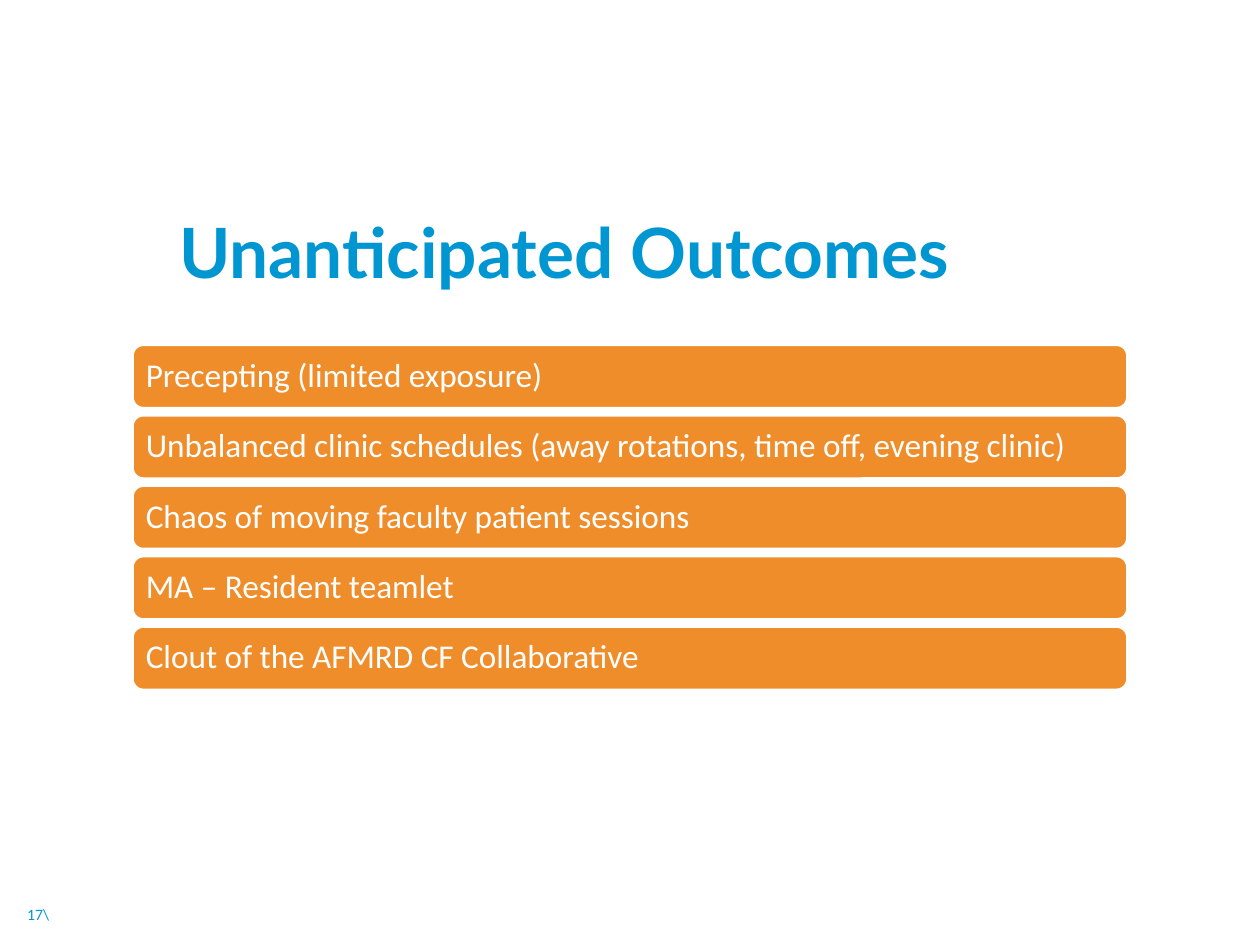
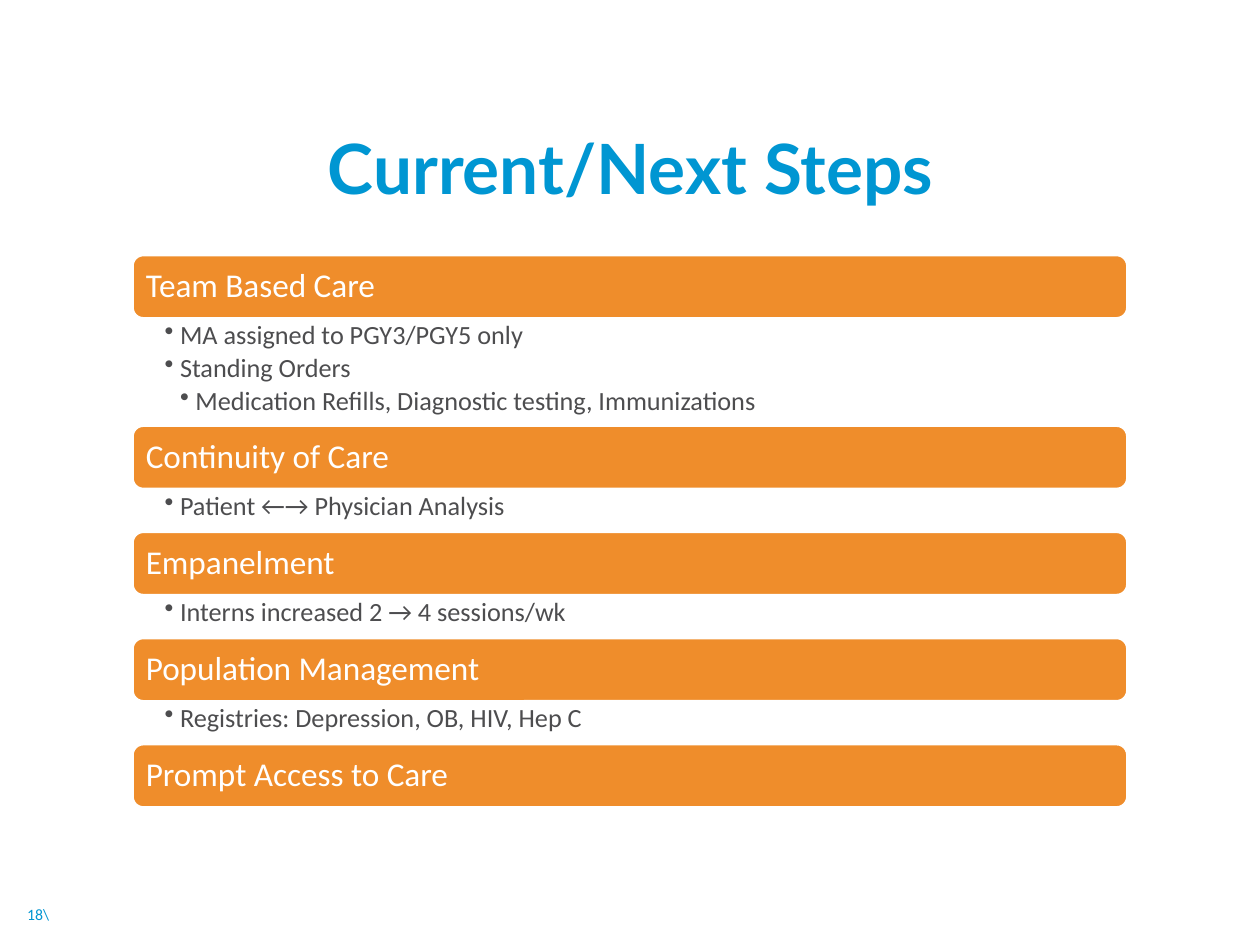
from lxml import etree
from pptx import Presentation
from pptx.dml.color import RGBColor
from pptx.enum.shapes import MSO_SHAPE
from pptx.enum.text import MSO_ANCHOR, PP_ALIGN
from pptx.oxml.ns import qn
from pptx.util import Cm, Pt

ROUNDED = MSO_SHAPE.ROUNDED_RECTANGLE
TOP, MIDDLE = MSO_ANCHOR.TOP, MSO_ANCHOR.MIDDLE
LEFT, CENTER, RIGHT = PP_ALIGN.LEFT, PP_ALIGN.CENTER, PP_ALIGN.RIGHT

BLUE = RGBColor(0x00, 0x96, 0xD2)
ORANGE = RGBColor(0xEF, 0x8D, 0x2B)
GREY = RGBColor(0x4D, 0x4D, 0x4F)
WHITE = RGBColor(0xFF, 0xFF, 0xFF)

# Text formats shared by both slides
TITLE_FONT = {"name": "Lato", "size": Pt(39.6), "bold": True}
NUMBER_FONT = {"name": "Calibri", "size": Pt(9)}
BAR_FONT = {"name": "Calibri", "size": Pt(19)}
DETAIL_FONT = {"name": "Calibri", "size": Pt(15)}
TIGHT = {"line_spacing": 0.9}
DETAIL_SPACING = {"line_spacing": 0.9, "space_after": Pt(2.7)}
BAR_MARGINS = dict.fromkeys(
    ("margin_left", "margin_right", "margin_top", "margin_bottom"), Cm(0.2))
DETAIL_MARGINS = {"margin_left": Cm(0.64), "margin_right": Cm(0.38),
                  "margin_top": Cm(0.08), "margin_bottom": Cm(0.08)}

# Geometry of the bar list, in centimetres
BAR_LEFT, BAR_WIDTH, BAR_HEIGHT = 2.68, 20.04, 1.26
DETAIL_LINE, DETAIL_PADDING = 0.65, 0.23
INDENT = 0.31


def apply_format(target, values):
    for name, value in values.items():
        setattr(target, name, value)


class Deck:
    """Holds the shared style and the slide being built."""

    def __init__(self):
        self.presentation = Presentation()
        self.presentation.slide_width = Cm(25.4)
        self.presentation.slide_height = Cm(19.05)
        self.slide = None

    def add_text(self, paragraph, text, font, color, spacing, alignment=LEFT):
        apply_format(paragraph, {"alignment": alignment, **spacing})
        run = paragraph.add_run()
        run.text = text
        apply_format(run.font, font)
        run.font.color.rgb = color

    def text_box(self, left, top, width, height, anchor, margins):
        box = self.slide.shapes.add_textbox(
            Cm(left), Cm(top), Cm(width), Cm(height))
        apply_format(box.text_frame,
                     {"word_wrap": True, "vertical_anchor": anchor, **margins})
        return box.text_frame

    def new_slide(self, number, title, title_left, title_top):
        layout = self.presentation.slide_layouts[6]
        self.slide = self.presentation.slides.add_slide(layout)
        frame = self.text_box(0, 18.06, 1.24, 0.76, MIDDLE, {})
        self.add_text(frame.paragraphs[0], f"{number}\\", NUMBER_FONT, BLUE, {}, RIGHT)
        frame = self.text_box(title_left, title_top, 18.26, 1.47, MIDDLE, {})
        self.add_text(frame.paragraphs[0], title, TITLE_FONT, BLUE, TIGHT, CENTER)

    def bar(self, top, text):
        shape = self.slide.shapes.add_shape(
            ROUNDED, Cm(BAR_LEFT), Cm(top), Cm(BAR_WIDTH), Cm(BAR_HEIGHT))
        shape.shadow.inherit = False
        shape.fill.solid()
        shape.fill.fore_color.rgb = ORANGE
        shape.line.color.rgb = WHITE
        shape.line.width = Pt(1)
        frame = shape.text_frame
        apply_format(frame, {"word_wrap": True, "vertical_anchor": MIDDLE,
                             **BAR_MARGINS})
        self.add_text(frame.paragraphs[0], text, BAR_FONT, WHITE, TIGHT)

    def details(self, top, height, items):
        frame = self.text_box(BAR_LEFT, top, BAR_WIDTH, height, TOP, DETAIL_MARGINS)
        for index, (level, text) in enumerate(items):
            paragraph = frame.add_paragraph() if index else frame.paragraphs[0]
            paragraph.level = level
            properties = paragraph._p.get_or_add_pPr()
            properties.set("marL", str(Cm(INDENT * level)))
            properties.set("indent", str(-Cm(INDENT)))
            etree.SubElement(properties, qn("a:buChar"), char="•")
            self.add_text(paragraph, text, DETAIL_FONT, GREY, DETAIL_SPACING)

    def bar_list(self, top, sections, gap=0.0):
        """Stack bars downwards, each followed by its details, if any."""
        for heading, items in sections:
            self.bar(top, heading)
            top += BAR_HEIGHT + gap
            if items:
                height = DETAIL_LINE * len(items) + DETAIL_PADDING
                self.details(top, height, items)
                top += height


OUTCOMES = [
    "Precepting (limited exposure)",
    "Unbalanced clinic schedules (away rotations, time off, evening clinic)",
    "Chaos of moving faculty patient sessions",
    "MA – Resident teamlet",
    "Clout of the AFMRD CF Collaborative",
]

# Each section: heading, then (level, text) details
STEPS = [
    ("Team Based Care", [
        (1, "MA assigned to PGY3/PGY5 only"),
        (1, "Standing Orders"),
        (2, "Medication Refills, Diagnostic testing, Immunizations"),
    ]),
    ("Continuity of Care", [(1, "Patient ←→ Physician Analysis")]),
    ("Empanelment", [(1, "Interns increased 2 → 4 sessions/wk")]),
    ("Population Management", [(1, "Registries: Depression, OB, HIV, Hep C")]),
    ("Prompt Access to Care", []),
]


def main():
    deck = Deck()

    # Unanticipated outcomes
    deck.new_slide(17, "Unanticipated Outcomes ", 2.41, 4.42)
    deck.bar_list(6.96, [(outcome, []) for outcome in OUTCOMES], gap=0.16)

    # Current and next steps
    deck.new_slide(18, "Current/Next Steps", 3.58, 2.74)
    deck.bar_list(5.15, STEPS)

    deck.presentation.save("out.pptx")


if __name__ == "__main__":
    main()
